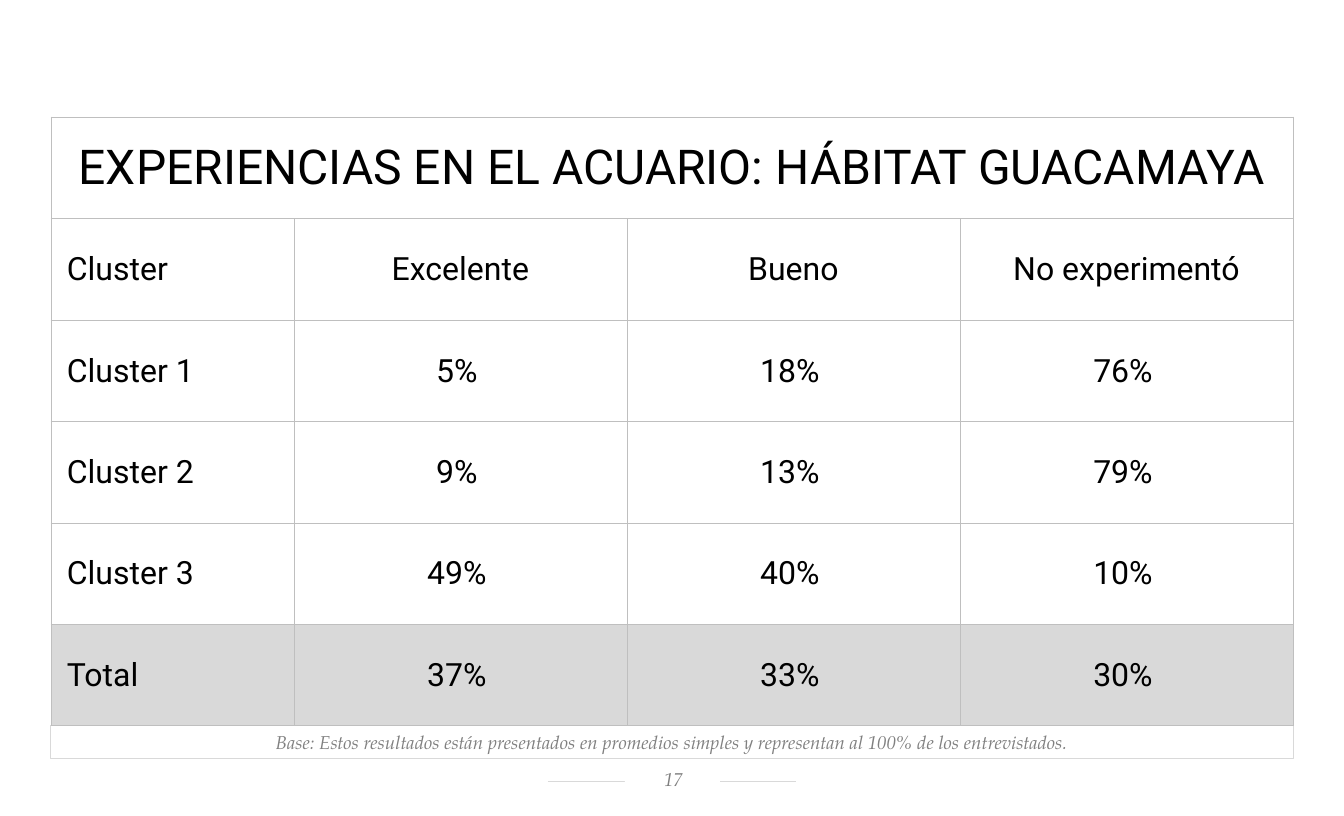
from lxml.etree import SubElement
from pptx import Presentation
from pptx.dml.color import RGBColor
from pptx.enum.shapes import MSO_CONNECTOR, MSO_SHAPE
from pptx.enum.text import MSO_ANCHOR, MSO_AUTO_SIZE, PP_ALIGN
from pptx.oxml import parse_xml
from pptx.oxml.ns import nsdecls, qn
from pptx.util import Pt

TITLE = "EXPERIENCIAS EN EL ACUARIO: HÁBITAT GUACAMAYA"
ROWS = [
    ["Cluster", "Excelente", "Bueno", "No experimentó"],
    ["Cluster 1", "5%", "18%", "76%"],
    ["Cluster 2", "9%", "13%", "79%"],
    ["Cluster 3", "49%", "40%", "10%"],
    ["Total", "37%", "33%", "30%"],
]
BASE_NOTE = (
    "Base: Estos resultados están presentados en promedios simples "
    "y representan al 100% de los entrevistados."
)
LEFT, TOP = 38.2, 87.8
COLUMN_WIDTHS = [182.2, 249.8, 249.8, 249.8]
ROW_HEIGHT = 76.1


def color(value):
    return RGBColor.from_string(value)


class SlideBuilder:
    table_font = "Roboto"
    note_font = "TeX Gyre Pagella"
    ink = "000000"
    muted = "808080"
    rule = "D9D9D9"
    border = "BFBFBF"
    paper = "FFFFFF"

    def __init__(self, page):
        self.page = page

    def set_font(self, para, name, size, value, italic=False):
        para.font.name = name
        para.font.size = Pt(size)
        para.font.color.rgb = color(value)
        para.font.italic = italic

    def set_margins(self, item, left, top, right, bottom):
        item.margin_left, item.margin_top = Pt(left), Pt(top)
        item.margin_right, item.margin_bottom = Pt(right), Pt(bottom)

    def add_rule(self, start, end, y):
        line = self.page.shapes.add_connector(
            MSO_CONNECTOR.STRAIGHT, Pt(start), Pt(y), Pt(end), Pt(y)
        )
        line.line.color.rgb = color(self.rule)
        line.line.width = Pt(0.5)
        SubElement(line._element.spPr, qn("a:effectLst"))

    def add_note(self, text, bounds, margins, anchor, outlined=False):
        box = self.page.shapes.add_shape(MSO_SHAPE.RECTANGLE, *map(Pt, bounds))
        box.shadow.inherit = False
        box.fill.solid()
        box.fill.fore_color.rgb = color(self.paper)
        if outlined:
            box.line.color.rgb = color(self.rule)
            box.line.width = Pt(0.75)
        else:
            box.line.fill.background()
        frame = box.text_frame
        frame.word_wrap = True
        frame.auto_size = MSO_AUTO_SIZE.SHAPE_TO_FIT_TEXT if outlined else MSO_AUTO_SIZE.NONE
        frame.vertical_anchor = anchor
        self.set_margins(frame, *margins)
        para = frame.paragraphs[0]
        para.text = text
        para.alignment = PP_ALIGN.CENTER
        self.set_font(para, self.note_font, 14, self.muted, italic=True)

    def style_cell(self, cell, filled):
        if filled:
            cell.fill.solid()
            cell.fill.fore_color.rgb = color(self.rule)
        else:
            cell.fill.background()
        properties = cell._tc.get_or_add_tcPr()
        for index, side in enumerate(("lnL", "lnR", "lnT", "lnB")):
            properties.insert(index, parse_xml(
                f'<a:{side} {nsdecls("a")} w="{Pt(0.5)}"><a:solidFill>'
                f'<a:srgbClr val="{self.border}"/></a:solidFill></a:{side}>'
            ))

    def write_cell(self, cell, text, size, left=0.7, right=0.7, indent=0):
        cell.vertical_anchor = MSO_ANCHOR.MIDDLE
        self.set_margins(cell, left, 0.7, right, 0)
        para = cell.text_frame.paragraphs[0]
        para.text = text
        if indent:
            para._p.get_or_add_pPr().set("marL", str(Pt(indent)))
        else:
            para.alignment = PP_ALIGN.CENTER
        self.set_font(para, self.table_font, size, self.ink)

    def add_results(self, title, rows):
        row_count = len(rows) + 1
        table = self.page.shapes.add_table(
            row_count, len(COLUMN_WIDTHS), Pt(LEFT), Pt(TOP),
            Pt(sum(COLUMN_WIDTHS)), Pt(ROW_HEIGHT * row_count),
        ).table
        table.first_row = False
        table.horz_banding = False
        for column, width in zip(table.columns, COLUMN_WIDTHS):
            column.width = Pt(width)
        for index, row in enumerate(table.rows):
            row.height = Pt(ROW_HEIGHT)
            for cell in row.cells:
                self.style_cell(cell, filled=index == row_count - 1)
        table.cell(0, 0).merge(table.cell(0, len(COLUMN_WIDTHS) - 1))
        self.write_cell(table.cell(0, 0), title, 36)
        for row_index, (label, *values) in enumerate(rows, 1):
            self.write_cell(table.cell(row_index, 0), label, 24, left=6, indent=6)
            for column_index, value in enumerate(values, 1):
                right = 0.7 if row_index == 1 else 6
                self.write_cell(table.cell(row_index, column_index), value, 24, right=right)


def main():
    deck = Presentation()
    deck.slide_width, deck.slide_height = Pt(1008), Pt(612)
    builder = SlideBuilder(deck.slides.add_slide(deck.slide_layouts[6]))
    builder.add_rule(411, 597, 586)
    builder.add_note("17", (468.7, 574.6, 71.3, 20.9), (8.6, 1.4, 7.2, 3.6), MSO_ANCHOR.MIDDLE)
    builder.add_note(
        BASE_NOTE, (LEFT, 544.3, sum(COLUMN_WIDTHS), 24.3), (7.2, 3.6, 7.2, 3.6),
        MSO_ANCHOR.BOTTOM, outlined=True,
    )
    builder.add_results(TITLE, ROWS)
    deck.save("out.pptx")


if __name__ == "__main__":
    main()
